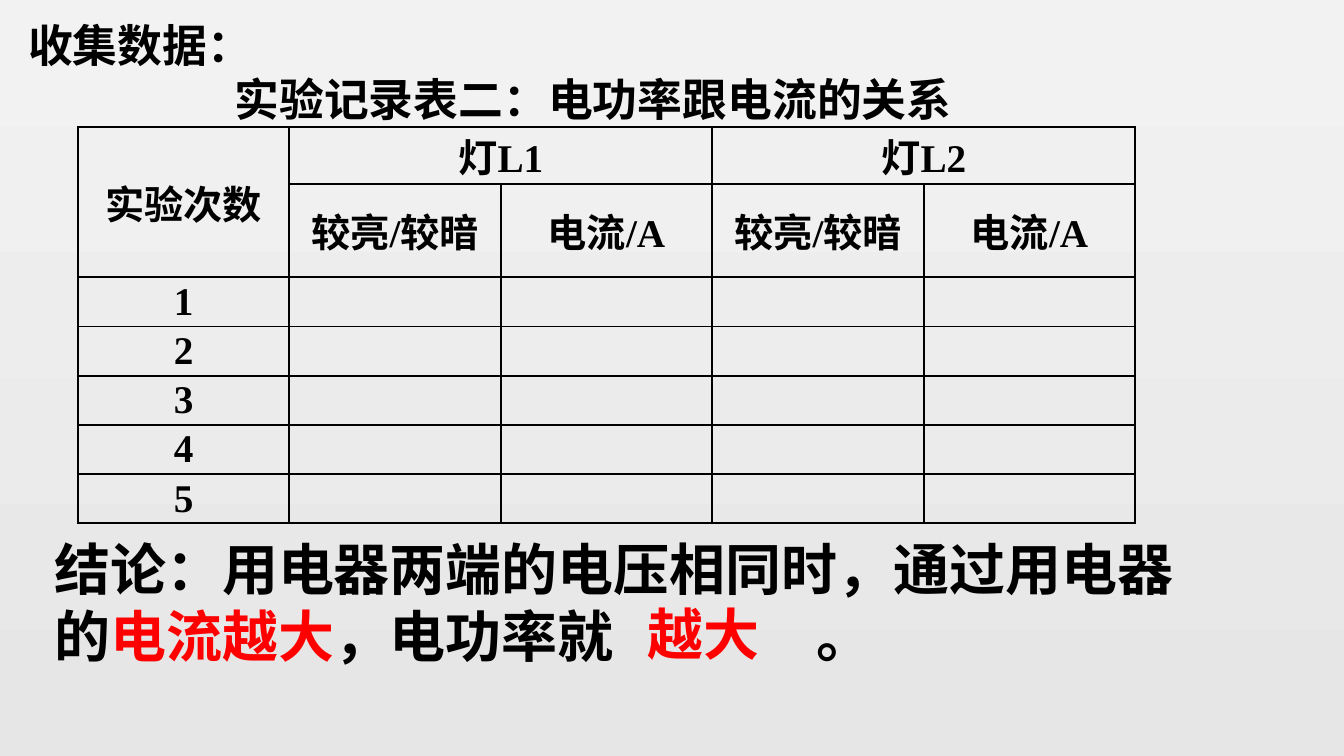
"""Build the slide recording how electric power relates to current."""
from dataclasses import dataclass

from lxml.etree import SubElement
from pptx import Presentation
from pptx.dml.color import RGBColor
from pptx.enum.text import MSO_ANCHOR as Anchor, MSO_AUTO_SIZE as AutoSize, PP_ALIGN as Align
from pptx.oxml.ns import qn
from pptx.slide import Slide
from pptx.table import _Cell as Cell
from pptx.text.text import _Paragraph as Paragraph, _Run as Run
from pptx.util import Cm, Pt


@dataclass(frozen=True)
class Theme:
    """Colours, fonts and type sizes of the slide."""
    ink: str = "000000"
    answer: str = "FF0000"
    top: str = "F2F2F2"
    bottom: str = "E7E6E6"
    serif: str = "Times New Roman"
    sans: str = "Calibri"
    table: int = 28
    heading: int = 32
    conclusion: int = 40
    border: float = 1.5


THEME = Theme()


@dataclass(frozen=True)
class Piece:
    """A stretch of text in one colour."""
    text: str
    color: str = THEME.ink
    underline: bool = False


@dataclass(frozen=True)
class Label:
    """A text box measured in centimetres."""
    left: float
    top: float
    width: float
    height: float
    size: int
    pieces: tuple[Piece, ...]
    font: str = THEME.serif
    wrap: bool = True
    anchor: Anchor = Anchor.TOP
    tab: float | None = None


@dataclass(frozen=True)
class Heading:
    """A table heading and the rows and columns it covers."""
    row: int
    column: int
    text: str
    rows: int = 1
    columns: int = 1


LABELS = (
    Label(5.66, 1.68, 18.82, 1.63, THEME.heading,
          (Piece("实验记录表二：电功率跟电流的关系"),), wrap=False, anchor=Anchor.MIDDLE),
    Label(1.12, 13.34, 30.05, 3.68, THEME.conclusion,
          (Piece("结论：用电器两端的电压相同时，通过用电器的"),
           Piece("电流越大", THEME.answer), Piece("，电功率就"),
           Piece("\t", underline=True), Piece("。")), tab=19.21),
    Label(0.46, 0.33, 6.93, 1.63, THEME.heading, (Piece("收集数据："),), font=THEME.sans),
    Label(16.08, 14.99, 3.86, 1.96, THEME.conclusion, (Piece("越大", THEME.answer),)),
)
LAMPS = ("灯L1", "灯L2")
MEASURES = ("较亮/较暗", "电流/A")
TRIALS = 5
COLUMN_WIDTH = 5.33
ROW_HEIGHTS = (1.24, 2.36) + (1.24,) * TRIALS


def style_run(span: Run, size: int, font: str, color: str) -> None:
    """Make a run bold in the given size, font and colour."""
    span.font.size = Pt(size)
    span.font.name = font
    span.font.bold = True
    span.font.color.rgb = RGBColor.from_string(color)


def add_tab(para: Paragraph, position: float) -> None:
    """Add a left tab stop to a paragraph."""
    stops = SubElement(para._p.get_or_add_pPr(), qn("a:tabLst"))
    SubElement(stops, qn("a:tab"), pos=str(Cm(position)), algn="l")


def add_label(page: Slide, label: Label) -> None:
    """Draw one text box."""
    box = page.shapes.add_textbox(
        Cm(label.left), Cm(label.top), Cm(label.width), Cm(label.height))
    frame = box.text_frame
    frame.word_wrap = label.wrap
    frame.auto_size = AutoSize.SHAPE_TO_FIT_TEXT
    frame.vertical_anchor = label.anchor
    para = frame.paragraphs[0]
    if label.tab is not None:
        add_tab(para, label.tab)
    for piece in label.pieces:
        span = para.add_run()
        span.text = piece.text
        style_run(span, label.size, label.font, piece.color)
        if piece.underline:
            span.font.underline = True


def frame_cell(cell: Cell) -> None:
    """Give a cell four plain borders and no fill."""
    properties = cell._tc.get_or_add_tcPr()
    for side in ("lnL", "lnR", "lnT", "lnB"):
        line = SubElement(properties, qn(f"a:{side}"), w=str(Pt(THEME.border)))
        fill = SubElement(line, qn("a:solidFill"))
        SubElement(fill, qn("a:srgbClr"), val=THEME.ink)
    cell.fill.background()


def write_cell(cell: Cell, text: str) -> None:
    """Write centred bold text in a cell."""
    cell.text_frame.text = text
    cell.vertical_anchor = Anchor.MIDDLE
    cell.margin_left = cell.margin_right = Cm(0.18)
    cell.margin_top = cell.margin_bottom = Cm(0)
    para = cell.text_frame.paragraphs[0]
    para.alignment = Align.CENTER
    style_run(para.runs[0], THEME.table, THEME.serif, THEME.ink)


def list_headings() -> list[Heading]:
    """List every written cell of the record table."""
    headings = [Heading(0, 0, "实验次数", rows=2)]
    for lamp_index, lamp in enumerate(LAMPS):
        first = 1 + lamp_index * len(MEASURES)
        headings.append(Heading(0, first, lamp, columns=len(MEASURES)))
        headings += [Heading(1, first + offset, measure)
                     for offset, measure in enumerate(MEASURES)]
    return headings + [Heading(1 + trial, 0, str(trial)) for trial in range(1, TRIALS + 1)]


def add_record_table(page: Slide) -> None:
    """Draw the record table."""
    columns = 1 + len(LAMPS) * len(MEASURES)
    table = page.shapes.add_table(
        len(ROW_HEIGHTS), columns, Cm(1.96), Cm(3.2),
        Cm(COLUMN_WIDTH * columns), Cm(sum(ROW_HEIGHTS))).table
    table.first_row = table.horz_banding = False
    for column in table.columns:
        column.width = Cm(COLUMN_WIDTH)
    for row, height in zip(table.rows, ROW_HEIGHTS):
        row.height = Cm(height)
    for cell in table.iter_cells():
        frame_cell(cell)
    for heading in list_headings():
        cell = table.cell(heading.row, heading.column)
        if heading.rows * heading.columns > 1:
            cell.merge(table.cell(heading.row + heading.rows - 1,
                                  heading.column + heading.columns - 1))
        write_cell(cell, heading.text)


def paint_background(page: Slide) -> None:
    """Shade the page from top to bottom."""
    fill = page.background.fill
    fill.gradient()
    fill.gradient_angle = 270
    for stop, color in zip(fill.gradient_stops, (THEME.top, THEME.bottom)):
        stop.color.rgb = RGBColor.from_string(color)


def main() -> None:
    """Build and save the deck."""
    deck = Presentation()
    deck.slide_width, deck.slide_height = Cm(33.87), Cm(19.05)
    page = deck.slides.add_slide(deck.slide_layouts[6])
    paint_background(page)
    add_record_table(page)
    for label in LABELS:
        add_label(page, label)
    deck.save("out.pptx")


if __name__ == "__main__":
    main()
